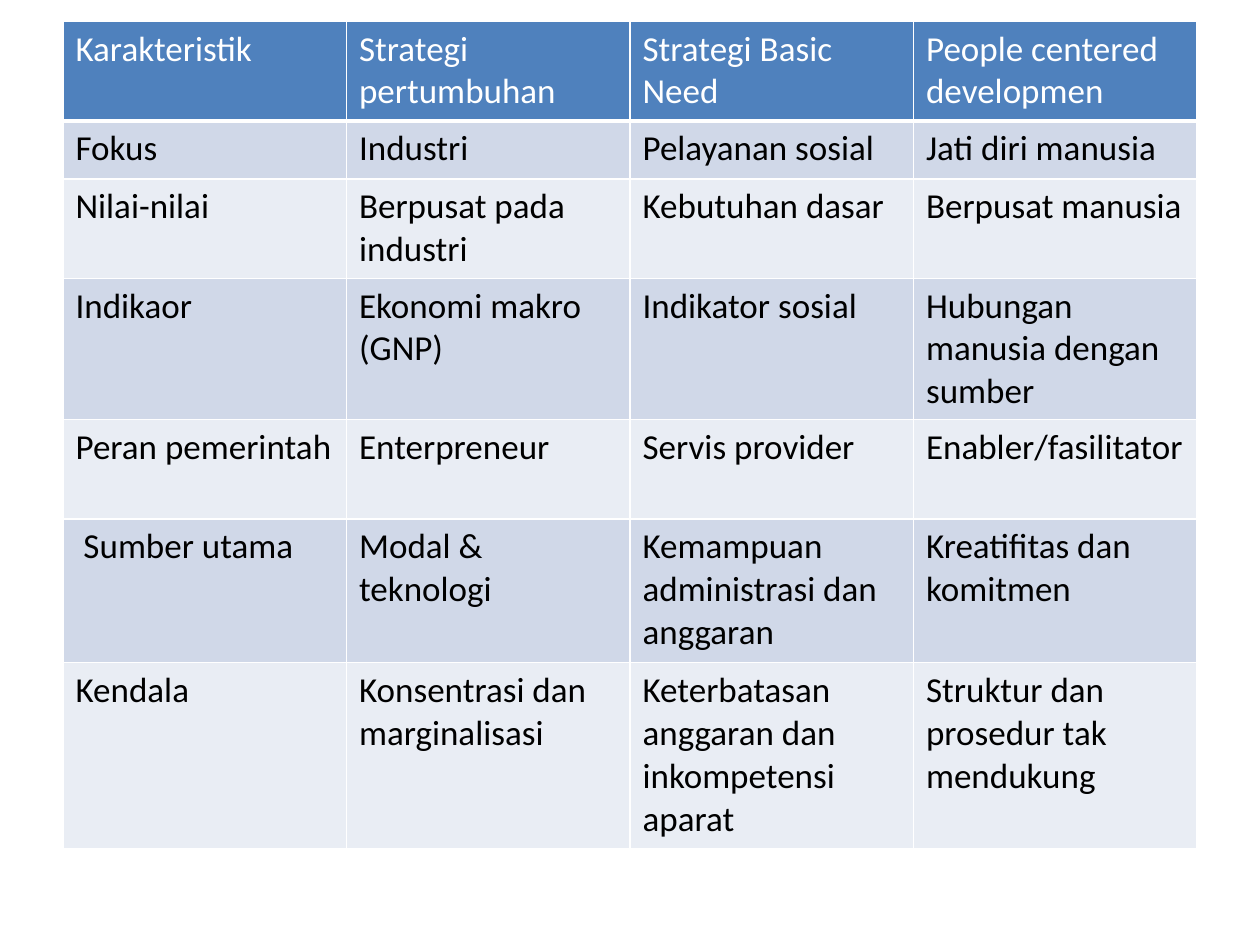
from dataclasses import dataclass

import lxml.etree
import pptx
import pptx.dml.color
import pptx.oxml.ns
import pptx.table
import pptx.util

Pt = pptx.util.Pt
RGBColor = pptx.dml.color.RGBColor
qn = pptx.oxml.ns.qn

WHITE = RGBColor(0xFF, 0xFF, 0xFF)
BLACK = RGBColor(0x00, 0x00, 0x00)
BLUE = RGBColor(0x4F, 0x81, 0xBD)
BAND_DARK = RGBColor(0xD0, 0xD8, 0xE8)
BAND_LIGHT = RGBColor(0xE9, 0xED, 0xF4)

FONT = "Calibri"
FONT_SIZE = Pt(20)
COLUMN_WIDTH = Pt(162)


@dataclass(frozen=True)
class RowStyle:
    fill: RGBColor
    text: RGBColor
    bottom_border: float = 1


@dataclass(frozen=True)
class StrategyRow:
    height: float
    texts: tuple[str, str, str, str]


HEADER = RowStyle(BLUE, WHITE, 3)
BANDS = (RowStyle(BAND_LIGHT, BLACK), RowStyle(BAND_DARK, BLACK))

ROWS = (
    StrategyRow(56.88, ("Karakteristik", "Strategi pertumbuhan",
                        "Strategi Basic Need", "People centered developmen")),
    StrategyRow(33.12, ("Fokus", "Industri", "Pelayanan sosial", "Jati diri manusia")),
    StrategyRow(56.88, ("Nilai-nilai", "Berpusat pada industri",
                        "Kebutuhan dasar", "Berpusat manusia")),
    StrategyRow(56.88, ("Indikaor", "Ekonomi makro (GNP)",
                        "Indikator sosial", "Hubungan manusia dengan sumber")),
    StrategyRow(56.88, ("Peran pemerintah", "Enterpreneur",
                        "Servis provider", "Enabler/fasilitator")),
    StrategyRow(82.08, (" Sumber utama", "Modal & teknologi",
                        "Kemampuan administrasi dan anggaran",
                        "Kreatifitas dan komitmen")),
    StrategyRow(106.56, ("Kendala", "Konsentrasi dan marginalisasi",
                         "Keterbatasan anggaran dan inkompetensi aparat",
                         "Struktur dan prosedur tak mendukung")),
)


def set_borders(cell: pptx.table._Cell, bottom: float) -> None:
    tc_pr = cell._tc.get_or_add_tcPr()
    widths = {"a:lnL": 1, "a:lnR": 1, "a:lnT": 1, "a:lnB": bottom}
    for i, (tag, width) in enumerate(widths.items()):
        ln = lxml.etree.Element(qn(tag), w=str(Pt(width)))
        fill = lxml.etree.SubElement(ln, qn("a:solidFill"))
        lxml.etree.SubElement(fill, qn("a:srgbClr"), val=str(WHITE))
        tc_pr.insert(i, ln)


def fill_cell(cell: pptx.table._Cell, text: str, style: RowStyle) -> None:
    cell.fill.solid()
    cell.fill.fore_color.rgb = style.fill
    set_borders(cell, style.bottom_border)
    r = cell.text_frame.paragraphs[0].add_run()
    r.text = text
    r.font.name = FONT
    r.font.size = FONT_SIZE
    r.font.bold = False
    r.font.color.rgb = style.text


def main() -> None:
    prs = pptx.Presentation()
    prs.slide_width, prs.slide_height = Pt(720), Pt(540)
    s = prs.slides.add_slide(prs.slide_layouts[6])
    columns = len(ROWS[0].texts)
    height = Pt(sum(row.height for row in ROWS))
    table = s.shapes.add_table(len(ROWS), columns, Pt(36), Pt(12.24),
                               COLUMN_WIDTH * columns, height).table
    for column in table.columns:
        column.width = COLUMN_WIDTH
    for i, row in enumerate(ROWS):
        table.rows[i].height = Pt(row.height)
        style = BANDS[i % 2] if i else HEADER
        for j, text in enumerate(row.texts):
            fill_cell(table.cell(i, j), text, style)
    prs.save("out.pptx")


if __name__ == "__main__":
    main()
